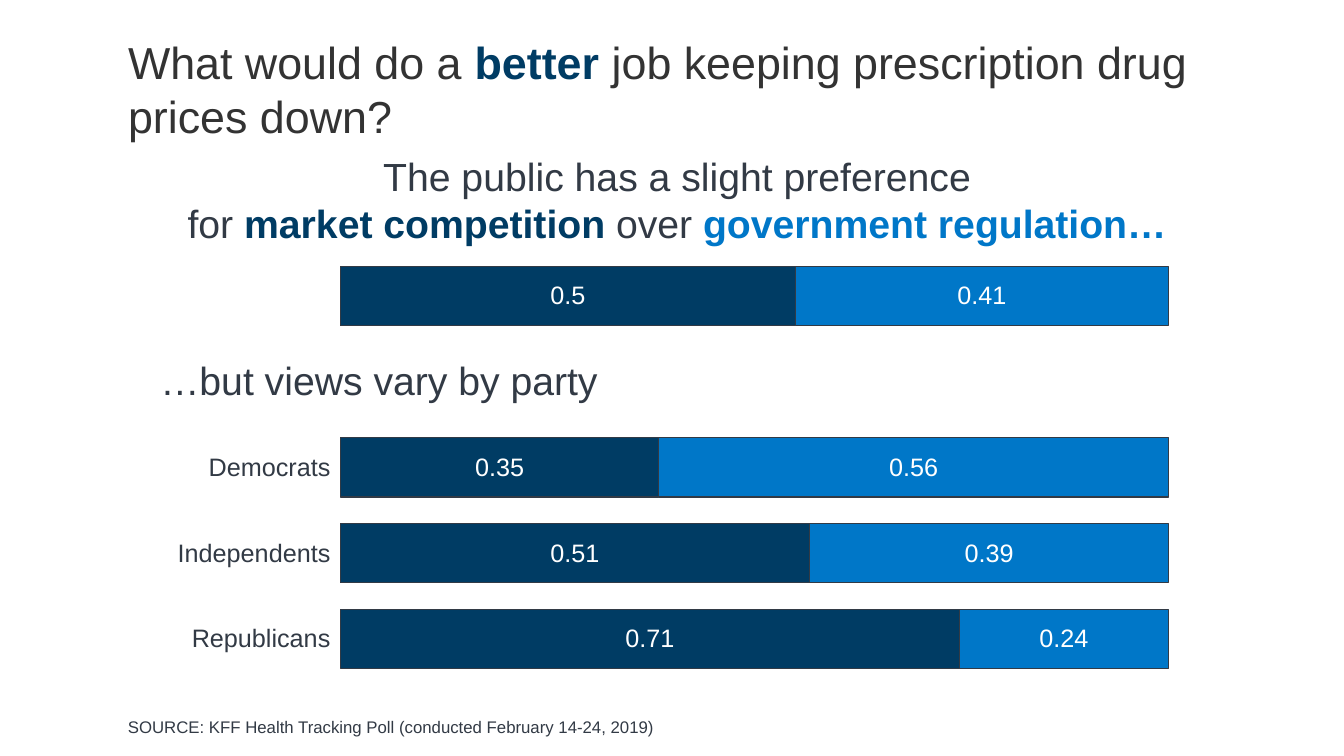
from pptx import Presentation
from pptx import util as u
from pptx.chart.data import CategoryChartData
from pptx.dml.color import RGBColor
from pptx.enum import chart as ch
from pptx.enum import text as t

NAVY = RGBColor(0x00, 0x3C, 0x64)
BLUE = RGBColor(0x00, 0x77, 0xC8)
SLATE = RGBColor(0x32, 0x3A, 0x45)
CHARCOAL = RGBColor(0x33, 0x33, 0x33)
WHITE = RGBColor(0xFF, 0xFF, 0xFF)


class PollSlide:
    """Holds the style and the current slide, and adds its elements."""

    FONT = "Arial"
    EMU_PER_PX = 914400 / 100.8

    def __init__(self, width, height):
        self.deck = Presentation()
        self.deck.slide_width = self.px(width)
        self.deck.slide_height = self.px(height)
        self.slide = self.deck.slides.add_slide(self.deck.slide_layouts[5])

    def px(self, length):
        return u.Emu(round(length * self.EMU_PER_PX))

    def style(self, font, size, color):
        font.name = self.FONT
        font.size = u.Pt(size)
        font.color.rgb = color

    def fill_lines(self, frame, lines, size, color, align):
        frame.word_wrap = True
        for index, line in enumerate(lines):
            paragraph = frame.add_paragraph() if index else frame.paragraphs[0]
            paragraph.alignment = align
            self.style(paragraph.font, size, color)
            for wording, accent in line:
                run = paragraph.add_run()
                run.text = wording
                if accent is not None:
                    run.font.bold = True
                    run.font.color.rgb = accent

    def title(self, box, line, size):
        heading = self.slide.shapes.title
        heading.left, heading.top, heading.width, heading.height = map(self.px, box)
        frame = heading.text_frame
        frame.auto_size = t.MSO_AUTO_SIZE.NONE
        frame.vertical_anchor = t.MSO_ANCHOR.TOP
        frame.margin_top = self.px(10)
        self.fill_lines(frame, [line], size, CHARCOAL, t.PP_ALIGN.LEFT)

    def text(self, box, lines, size, align=t.PP_ALIGN.CENTER, anchor=t.MSO_ANCHOR.TOP):
        frame = self.slide.shapes.add_textbox(*map(self.px, box)).text_frame
        frame.vertical_anchor = anchor
        self.fill_lines(frame, lines, size, SLATE, align)

    def stacked_bars(self, box, groups, answers, size):
        data = CategoryChartData()
        data.categories = groups
        for name, shares, _ in answers:
            data.add_series(name, shares)
        chart = self.slide.shapes.add_chart(
            ch.XL_CHART_TYPE.BAR_STACKED_100, *map(self.px, box), data).chart
        self.style(chart.font, 13, CHARCOAL)
        chart.has_legend = False
        chart.has_title = False

        shares_axis = chart.value_axis
        shares_axis.visible = False
        shares_axis.has_major_gridlines = False
        shares_axis.minimum_scale = 0
        shares_axis.maximum_scale = 1.05
        groups_axis = chart.category_axis
        groups_axis.reverse_order = True
        groups_axis.format.line.fill.background()
        self.style(groups_axis.tick_labels.font, size, SLATE)

        plot = chart.plots[0]
        plot.gap_width = 45
        plot.overlap = 100
        plot.vary_by_categories = False
        for series, (_, _, color) in zip(plot.series, answers):
            series.format.fill.solid()
            series.format.fill.fore_color.rgb = color
            series.format.line.color.rgb = SLATE
            series.format.line.width = u.Pt(0.75)
            labels = series.data_labels
            labels.show_value = True
            self.style(labels.font, size, WHITE)
        self.place_plot(chart, x=0.227, y=0.043, w=0.773, h=0.957)

    def place_plot(self, chart, **fractions):
        area = chart.plots[0]._element.getparent()
        layout = area.find("{*}layout")
        namespace = area.tag.split("}")[0] + "}"
        if layout is None:
            layout = area.makeelement(namespace + "layout")
            area.insert(0, layout)
        manual = layout.makeelement(namespace + "manualLayout")
        layout.append(manual)
        settings = {"layoutTarget": "inner", "xMode": "edge", "yMode": "edge", **fractions}
        for tag, value in settings.items():
            manual.append(manual.makeelement(namespace + tag, {"val": str(value)}))


def main():
    poll = PollSlide(1344, 756)
    poll.title((118, 25, 1184, 101), [
        ("What would do a ", None), ("better", NAVY),
        (" job keeping prescription drug prices down?", None)], 32)
    poll.text((118, 681, 905, 61),
              [[("SOURCE: KFF Health Tracking Poll (conducted February 14-24, 2019)", None)]],
              12, t.PP_ALIGN.LEFT, t.MSO_ANCHOR.BOTTOM)
    poll.stacked_bars((85, 234, 1125, 448),
                      ["", "", "Democrats", "Independents", "Republicans"],
                      [("Series 1", [0.5, None, 0.35, 0.51, 0.71], NAVY),
                       ("Series 2", [0.41, None, 0.56, 0.39, 0.24], BLUE)], 18)
    poll.text((127, 147, 1100, 105), [
        [("The public has a slight preference", None)],
        [("for ", None), ("market competition ", NAVY),
         ("over ", None), ("government regulation…", BLUE)]], 28)
    poll.text((127, 351, 504, 57), [[("…but views vary by party", None)]], 28)
    poll.deck.save("out.pptx")


if __name__ == "__main__":
    main()
